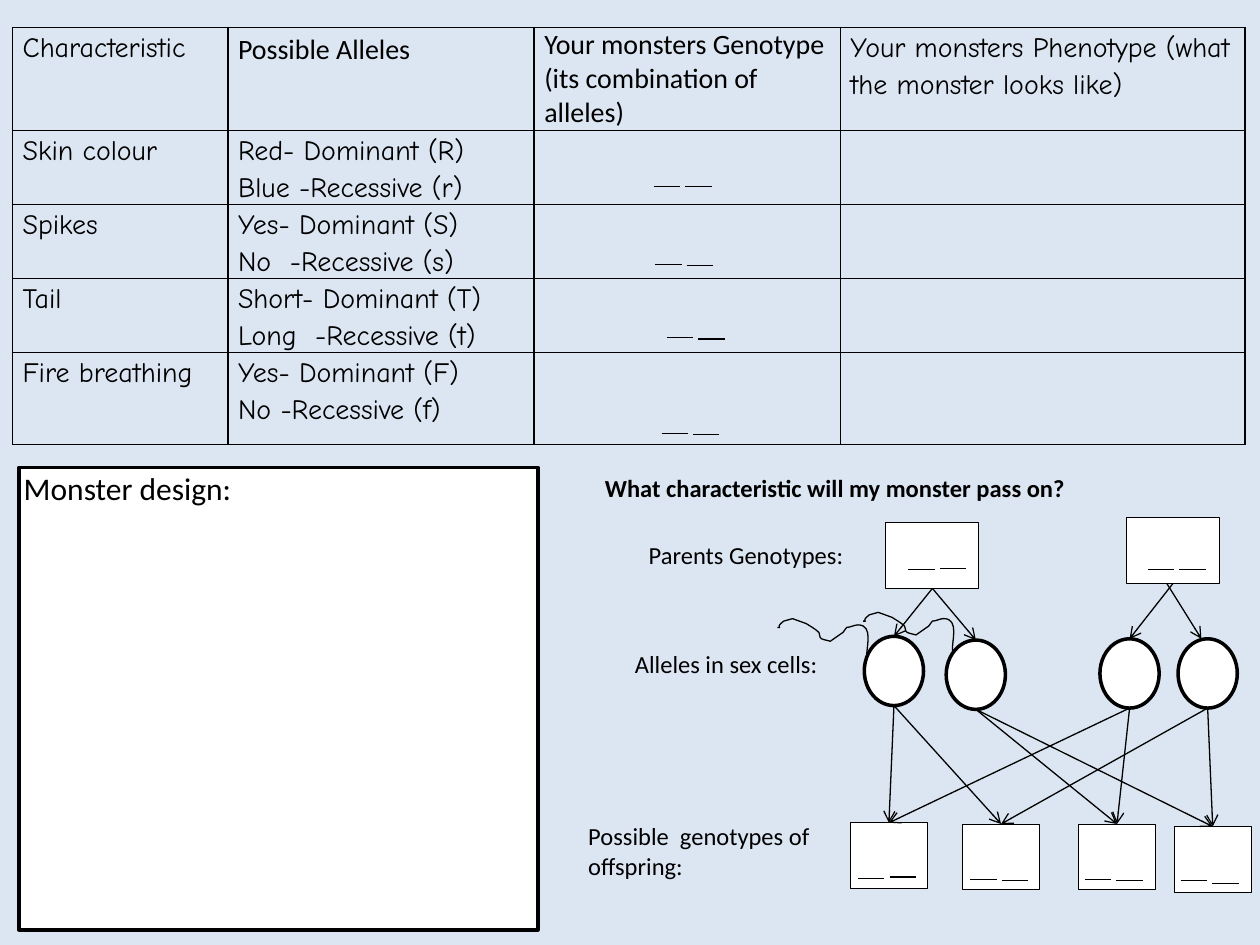
from pptx import Presentation
from pptx.dml.color import RGBColor
from pptx.enum.shapes import MSO_CONNECTOR, MSO_SHAPE
from pptx.enum.text import MSO_ANCHOR, MSO_AUTO_SIZE, PP_ALIGN
from pptx.oxml.ns import qn
from pptx.util import Inches, Pt
from lxml import etree

STRAIGHT = MSO_CONNECTOR.STRAIGHT
RECTANGLE, OVAL = MSO_SHAPE.RECTANGLE, MSO_SHAPE.OVAL
TOP, LEFT, NO_AUTOFIT = MSO_ANCHOR.TOP, PP_ALIGN.LEFT, MSO_AUTO_SIZE.NONE
BLACK, WHITE, PALE_BLUE = "000000", "FFFFFF", "DCE6F2"
SANS, HAND = "Calibri", "Comic Neue"

COLUMN_WIDTHS = [1.71, 2.43, 2.43, 3.21]
ROW_HEIGHTS = [0.75, 0.58, 0.58, 0.58, 0.73]
ROWS = [
    ["Characteristic", "Possible Alleles",
     "Your monsters Genotype (its combination of alleles)",
     "Your monsters Phenotype (what the monster looks like)"],
    ["Skin colour", "Red- Dominant (R)\nBlue -Recessive (r)", "", ""],
    ["Spikes", "Yes- Dominant (S)\nNo  -Recessive (s)", "", ""],
    ["Tail", "Short- Dominant (T)\nLong  -Recessive (t)", "", ""],
    ["Fire breathing", "Yes- Dominant (F)\nNo -Recessive (f)", "", ""],
]
LABELS = [
    ("Monster design:", 0.09, 3.67, 3.4, 0.4, 18),
    ("Parents Genotypes:", 5.05, 4.24, 2.62, 0.34, 14),
    ("Alleles in sex cells:", 4.94, 5.1, 2.62, 0.34, 14),
    ("Possible  genotypes of offspring:", 4.57, 6.47, 2.18, 0.57, 14),
]
PARENTS = [(7.03, 4.15), (8.94, 4.11)]
SEX_CELLS = [(6.86, 5.05), (7.51, 5.08), (8.73, 5.07), (9.35, 5.07)]
OFFSPRING = [(6.75, 6.53), (7.64, 6.54), (8.56, 6.54), (9.32, 6.56)]
INHERITANCE = [(0, 0), (0, 1), (1, 2), (1, 3), (2, 0), (2, 2), (3, 1), (3, 3)]
ALLELE_BLANKS = [
    (5.19, 1.48, 1.48), (5.2, 2.1, 2.11), (5.29, 2.68, 2.69), (5.25, 3.44, 3.45),
    (7.21, 4.52, 4.51), (9.11, 4.52, 4.52),
    (6.81, 6.97, 6.96), (7.7, 6.98, 6.99), (8.61, 6.98, 6.99), (9.37, 6.99, 7.01),
]
TAIL_START = (6.88, 5.22)
TAIL_CURVES = [
    (6.87, 5.15), (6.94, 4.96), (6.81, 4.96),
    (6.78, 4.96), (6.75, 4.98), (6.72, 4.98),
    (6.71, 4.99), (6.7, 5.01), (6.69, 5.02),
    (6.66, 5.04), (6.59, 5.09), (6.59, 5.09),
    (6.56, 5.08), (6.54, 5.08), (6.52, 5.07),
    (6.5, 5.06), (6.51, 5.03), (6.5, 5.02),
    (6.47, 4.99), (6.43, 4.97), (6.4, 4.95),
    (6.4, 4.95), (6.29, 4.91), (6.29, 4.91),
    (6.27, 4.92), (6.24, 4.92), (6.22, 4.93),
    (6.14, 4.99), (6.22, 4.98), (6.17, 4.98),
]


def color(value):
    return RGBColor.from_string(value)


def set_font(paragraph, size, name=SANS, bold=False):
    for run in paragraph.runs:
        font = run.font
        font.size, font.name, font.bold = Pt(size), name, bold
        font.color.rgb = color(BLACK)


def set_line(shape, width):
    shape.line.color.rgb = color(BLACK)
    shape.line.width = Pt(width)


def set_borders(cell):
    properties = cell._tc.get_or_add_tcPr()
    for side in ("a:lnL", "a:lnR", "a:lnT", "a:lnB"):
        border = etree.SubElement(properties, qn(side), w=str(Pt(1)))
        fill = etree.SubElement(border, qn("a:solidFill"))
        etree.SubElement(fill, qn("a:srgbClr"), val=BLACK)


def add_characteristics_table(slide):
    table = slide.shapes.add_table(
        len(ROWS), len(COLUMN_WIDTHS), Inches(0.1), Inches(0.22),
        Inches(sum(COLUMN_WIDTHS)), Inches(sum(ROW_HEIGHTS))).table
    table.first_row = table.horz_banding = False
    for column, width in zip(table.columns, COLUMN_WIDTHS):
        column.width = Inches(width)
    for row_index, (row, height) in enumerate(zip(table.rows, ROW_HEIGHTS)):
        row.height = Inches(height)
        for column_index, cell in enumerate(row.cells):
            cell.margin_left = cell.margin_right = Inches(0.08)
            cell.margin_top = cell.margin_bottom = 0
            set_borders(cell)
            cell.fill.background()
            cell.text_frame.text = ROWS[row_index][column_index]
            sans_heading = row_index == 0 and column_index in (1, 2)
            for paragraph in cell.text_frame.paragraphs:
                set_font(paragraph, 16, SANS if sans_heading else HAND)
                if paragraph.runs and (row_index, column_index) != (0, 2):
                    paragraph.line_spacing = 1.15


def add_heading(slide):
    title = slide.shapes.title
    title.left, title.top = Inches(4.7), Inches(3.7)
    title.width, title.height = Inches(5.04), Inches(0.34)
    frame = title.text_frame
    frame.text = "What characteristic will my monster pass on?"
    frame.auto_size, frame.vertical_anchor = NO_AUTOFIT, TOP
    frame.paragraphs[0].alignment = LEFT
    set_font(frame.paragraphs[0], 14, bold=True)


def add_label(slide, text, left, top, width, height, size):
    box = slide.shapes.add_textbox(Inches(left), Inches(top), Inches(width), Inches(height))
    box.text_frame.word_wrap = True
    box.text_frame.text = text
    set_font(box.text_frame.paragraphs[0], size)


def add_white_shape(slide, kind, left, top, width, height, line_width):
    shape = slide.shapes.add_shape(kind, Inches(left), Inches(top), Inches(width), Inches(height))
    shape.shadow.inherit = False
    shape.fill.solid()
    shape.fill.fore_color.rgb = color(WHITE)
    set_line(shape, line_width)
    return shape


def add_line(slide, start_x, start_y, end_x, end_y):
    connector = slide.shapes.add_connector(STRAIGHT, start_x, start_y, end_x, end_y)
    set_line(connector, 0.75)
    etree.SubElement(connector._element.spPr, qn("a:effectLst"))
    return connector


def add_arrow(slide, source, target, shift=0):
    connector = add_line(
        slide, source.left + source.width // 2 + shift, source.top + source.height,
        target.left + target.width // 2 + shift, target.top)
    if not shift:
        if source.auto_shape_type == RECTANGLE:
            connector.begin_connect(source, 2)
        connector.end_connect(target, 0)
    etree.SubElement(connector.line._get_or_add_ln(), qn("a:tailEnd"), type="arrow")


def add_allele_blanks(slide, left, first_top, second_top):
    for start, top in ((left, first_top), (left + 0.25, second_top)):
        add_line(slide, Inches(start), Inches(top), Inches(start + 0.21), Inches(top))


def bend_segments(shape):
    segments = list(shape._element.iter(qn("a:lnTo")))
    for index in range(0, len(segments), 3):
        curve = etree.Element(qn("a:cubicBezTo"))
        segments[index].addprevious(curve)
        for segment in segments[index:index + 3]:
            curve.append(segment[0])
            segment.getparent().remove(segment)


def add_sperm_tail(slide, shift_x, shift_y):
    points = [(Inches(x + shift_x), Inches(y + shift_y)) for x, y in [TAIL_START] + TAIL_CURVES]
    builder = slide.shapes.build_freeform(*points[0])
    builder.add_line_segments(points[1:], close=False)
    tail = builder.convert_to_shape()
    bend_segments(tail)
    tail.shadow.inherit = False
    tail.fill.background()
    set_line(tail, 0.75)


def add_inheritance_diagram(slide):
    parents = [add_white_shape(slide, RECTANGLE, *place, 0.74, 0.52, 0.5) for place in PARENTS]
    cells = [add_white_shape(slide, OVAL, *place, 0.47, 0.55, 2) for place in SEX_CELLS]
    offspring = [add_white_shape(slide, RECTANGLE, *place, 0.61, 0.52, 0.5) for place in OFFSPRING]
    for index, cell in enumerate(cells):
        add_arrow(slide, parents[index // 2], cell, Inches(-0.05) if index == 3 else 0)
    for cell_index, child_index in INHERITANCE:
        add_arrow(slide, cells[cell_index], offspring[child_index])
    add_sperm_tail(slide, 0, 0)
    add_sperm_tail(slide, 0.68, -0.05)


def main():
    presentation = Presentation()
    presentation.slide_width, presentation.slide_height = Inches(10), Inches(7.5)
    slide = presentation.slides.add_slide(presentation.slide_layouts[5])
    slide.background.fill.solid()
    slide.background.fill.fore_color.rgb = color(PALE_BLUE)
    add_characteristics_table(slide)
    add_white_shape(slide, RECTANGLE, 0.15, 3.71, 4.12, 3.67, 2)
    add_heading(slide)
    for label in LABELS:
        add_label(slide, *label)
    add_inheritance_diagram(slide)
    for blanks in ALLELE_BLANKS:
        add_allele_blanks(slide, *blanks)
    presentation.save("out.pptx")


if __name__ == "__main__":
    main()
